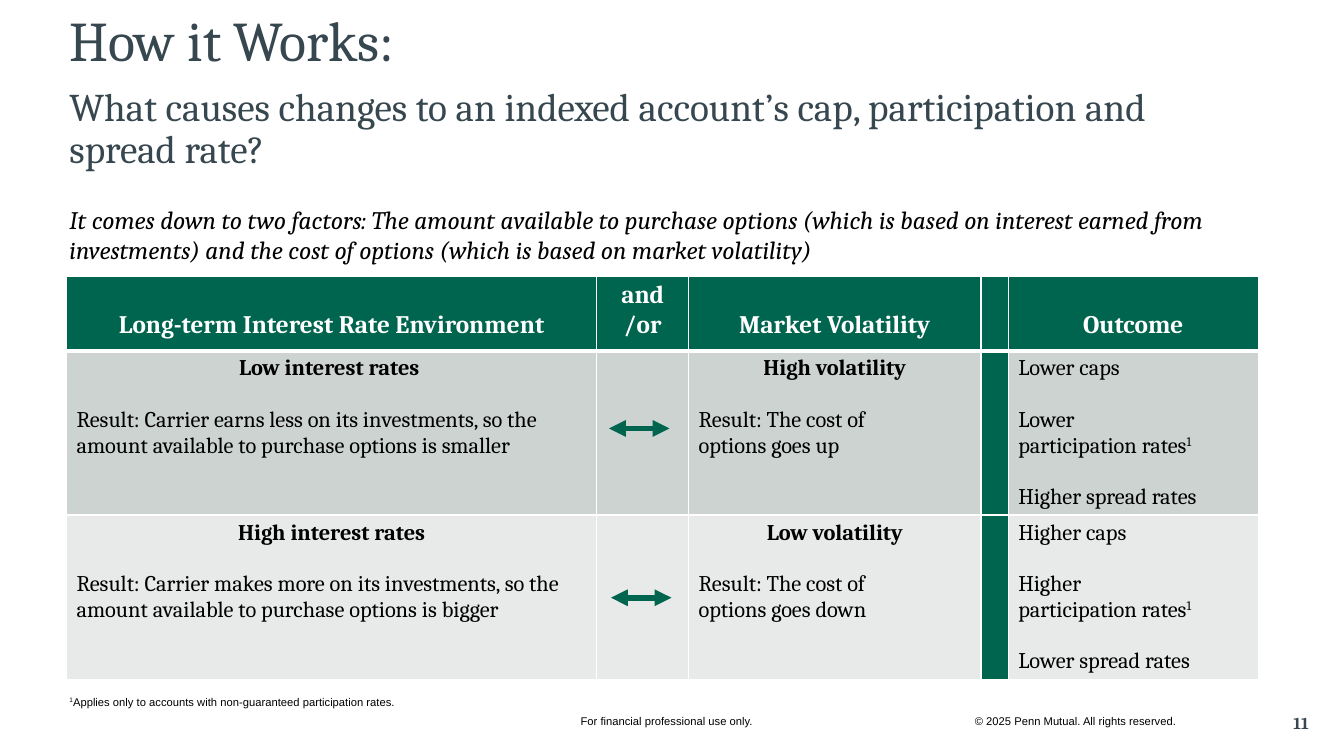
from lxml import etree
from pptx import Presentation
from pptx.dml.color import RGBColor
from pptx.enum.shapes import MSO_CONNECTOR, MSO_SHAPE
from pptx.enum.text import MSO_ANCHOR, PP_ALIGN
from pptx.oxml.ns import qn
from pptx.util import Inches, Pt

LEFT, CENTER = PP_ALIGN.LEFT, PP_ALIGN.CENTER
TOP, MIDDLE = MSO_ANCHOR.TOP, MSO_ANCHOR.MIDDLE
STRAIGHT, RECTANGLE = MSO_CONNECTOR.STRAIGHT, MSO_SHAPE.RECTANGLE

SLATE = RGBColor(0x37, 0x47, 0x4F)
GREEN = RGBColor(0x00, 0x65, 0x4E)
BLACK = RGBColor(0, 0, 0)
WHITE = RGBColor(0xFF, 0xFF, 0xFF)
DARK_BAND = RGBColor(0xCC, 0xD3, 0xD0)
LIGHT_BAND = RGBColor(0xE7, 0xEA, 0xE9)
SERIF, SANS = "Cambria", "Arial"

HEADING = [
    ("How it Works:", 40, 0),
    ("What causes changes to an indexed account’s cap, participation and spread rate?", 28, 10),
]
INTRO = ("It comes down to two factors: The amount available to purchase options "
         "(which is based on interest earned from investments) and the cost of options "
         "(which is based on market volatility)")
FOOTNOTE_MARK = "1"
FOOTNOTE = "Applies only to accounts with non-guaranteed participation rates."
FOOTERS = [
    ("© 2025 Penn Mutual. All rights reserved.", (9.57, 7.04, 2.93, 0.23)),
    ("For financial professional use only.", (5.66, 7.03, 2, 0.24)),
]
PAGE_NUMBER = "11"

HEADERS = [["Long-term Interest Rate Environment"], ["and", "/or"],
           ["Market Volatility"], [], ["Outcome"]]
SCENARIOS = [
    {
        "band": DARK_BAND,
        "rates": ("Low interest rates ", ["Result: Carrier earns less on its investments, "
                                          "so the amount available to purchase options is smaller"]),
        "volatility": ("High volatility", ["Result: The cost of", "options goes up"]),
        "outcome": ("Lower", "Higher"),
        "arrow": (6.04, 4.25),
    },
    {
        "band": LIGHT_BAND,
        "rates": ("High interest rates", ["Result: Carrier makes more on its investments, "
                                          "so the amount available to purchase options is bigger"]),
        "volatility": ("Low volatility", ["Result: The cost of", "options goes down"]),
        "outcome": ("Higher", "Lower"),
        "arrow": (6.06, 5.93),
    },
]
TABLE_LEFT, TABLE_TOP = 0.66, 2.74
COLUMN_WIDTHS = [5.26, 0.91, 2.9, 0.27, 2.48]
ROW_HEIGHTS = [0.74, 1.63, 1.63]
HEADER_SIZE, BODY_SIZE = 18, 16
BODY_GAP = 18.3
ARROW_LENGTH = 0.6


def style(paragraph, size, color, face=SERIF, bold=False, italic=False, align=LEFT, gap=0):
    paragraph.alignment = align
    paragraph.space_before = Pt(gap)
    font = paragraph.font
    font.name, font.size, font.bold, font.italic = face, Pt(size), bold, italic
    font.color.rgb = color


def add_superscript(paragraph, mark):
    run = paragraph.add_run()
    run.text = mark
    run._r.get_or_add_rPr().set("baseline", "30000")


def next_paragraph(frame, index):
    return frame.add_paragraph() if index else frame.paragraphs[0]


def add_text_frame(slide, box, anchor=TOP):
    frame = slide.shapes.add_textbox(*map(Inches, box)).text_frame
    frame.word_wrap = True
    frame.vertical_anchor = anchor
    return frame


def add_line(slide, text, box, size, color, anchor=MIDDLE, **look):
    paragraph = add_text_frame(slide, box, anchor).paragraphs[0]
    paragraph.text = text
    style(paragraph, size, color, **look)


def add_footer(slide, text, box):
    panel = slide.shapes.add_shape(RECTANGLE, *map(Inches, box))
    panel.shadow.inherit = False
    panel.fill.solid()
    panel.fill.fore_color.rgb = WHITE
    panel.line.fill.background()
    panel.text_frame.word_wrap = True
    panel.text_frame.vertical_anchor = MIDDLE
    paragraph = panel.text_frame.paragraphs[0]
    paragraph.text = text
    style(paragraph, 8, BLACK, face=SANS)


def paint_cell(cell, fill, bottom_width=1):
    properties = cell._tc.get_or_add_tcPr()
    for side, width in (("L", 1), ("R", 1), ("T", 1), ("B", bottom_width)):
        border = etree.SubElement(properties, qn("a:ln" + side), w=str(Pt(width)))
        solid = etree.SubElement(border, qn("a:solidFill"))
        etree.SubElement(solid, qn("a:srgbClr"), val=str(WHITE))
    cell.fill.solid()
    cell.fill.fore_color.rgb = fill


def fill_result(cell, title, lines):
    frame = cell.text_frame
    for index, text in enumerate([title] + lines):
        paragraph = next_paragraph(frame, index)
        paragraph.text = text
        style(paragraph, BODY_SIZE, BLACK, bold=index == 0,
              align=LEFT if index else CENTER, gap=BODY_GAP if index == 1 else 0)


def fill_outcome(cell, rate_change, spread_change):
    cell.margin_bottom = 0
    lines = [(f"{rate_change} caps", 0), (rate_change, BODY_GAP),
             ("participation rates", 0), (f"{spread_change} spread rates", BODY_GAP)]
    for index, (text, gap) in enumerate(lines):
        paragraph = next_paragraph(cell.text_frame, index)
        paragraph.text = text
        if text == "participation rates":
            add_superscript(paragraph, FOOTNOTE_MARK)
        style(paragraph, BODY_SIZE, BLACK, gap=gap)


def add_factor_table(slide):
    table = slide.shapes.add_table(
        len(ROW_HEIGHTS), len(COLUMN_WIDTHS), Inches(TABLE_LEFT), Inches(TABLE_TOP),
        Inches(sum(COLUMN_WIDTHS)), Inches(sum(ROW_HEIGHTS))).table
    for column, width in zip(table.columns, COLUMN_WIDTHS):
        column.width = Inches(width)
    for row, height in zip(table.rows, ROW_HEIGHTS):
        row.height = Inches(height)

    for column, lines in enumerate(HEADERS):
        cell = table.cell(0, column)
        paint_cell(cell, GREEN, bottom_width=3)
        if len(lines) == 1:
            cell.margin_top = Inches(0.34)
        for index, text in enumerate(lines):
            paragraph = next_paragraph(cell.text_frame, index)
            paragraph.text = text
            style(paragraph, HEADER_SIZE, WHITE, bold=True, align=CENTER)

    for row, scenario in enumerate(SCENARIOS, start=1):
        for column in range(len(COLUMN_WIDTHS)):
            paint_cell(table.cell(row, column), GREEN if column == 3 else scenario["band"])
        fill_result(table.cell(row, 0), *scenario["rates"])
        fill_result(table.cell(row, 2), *scenario["volatility"])
        fill_outcome(table.cell(row, 4), *scenario["outcome"])


def add_double_arrow(slide, left, y):
    arrow = slide.shapes.add_connector(
        STRAIGHT, Inches(left), Inches(y), Inches(left + ARROW_LENGTH), Inches(y))
    arrow.line.color.rgb = GREEN
    arrow.line.width = Pt(4)
    outline = arrow.line._get_or_add_ln()
    for end in ("a:headEnd", "a:tailEnd"):
        etree.SubElement(outline, qn(end), type="triangle")
    etree.SubElement(arrow._element.spPr, qn("a:effectLst"))


def main():
    deck = Presentation()
    deck.slide_width, deck.slide_height = Inches(13.33), Inches(7.5)
    slide = deck.slides.add_slide(deck.slide_layouts[6])

    heading = add_text_frame(slide, (0.59, 0.08, 11.92, 0.71))
    for index, (text, size, gap) in enumerate(HEADING):
        paragraph = next_paragraph(heading, index)
        paragraph.text = text
        paragraph.line_spacing = 0.9
        style(paragraph, size, SLATE, gap=gap)

    add_factor_table(slide)
    for scenario in SCENARIOS:
        add_double_arrow(slide, *scenario["arrow"])

    add_line(slide, INTRO, (0.59, 1.98, 11.96, 0.71), 18, BLACK, anchor=TOP, italic=True)

    footnote = add_text_frame(slide, (0.59, 6.84, 6.87, 0.24), MIDDLE).paragraphs[0]
    add_superscript(footnote, FOOTNOTE_MARK)
    footnote.add_run().text = FOOTNOTE
    style(footnote, 8, BLACK, face=SANS)

    for text, box in FOOTERS:
        add_footer(slide, text, box)
    add_line(slide, PAGE_NUMBER, (12.73, 7.02, 0.56, 0.3), 12, SLATE, bold=True)

    deck.save("out.pptx")


if __name__ == "__main__":
    main()
